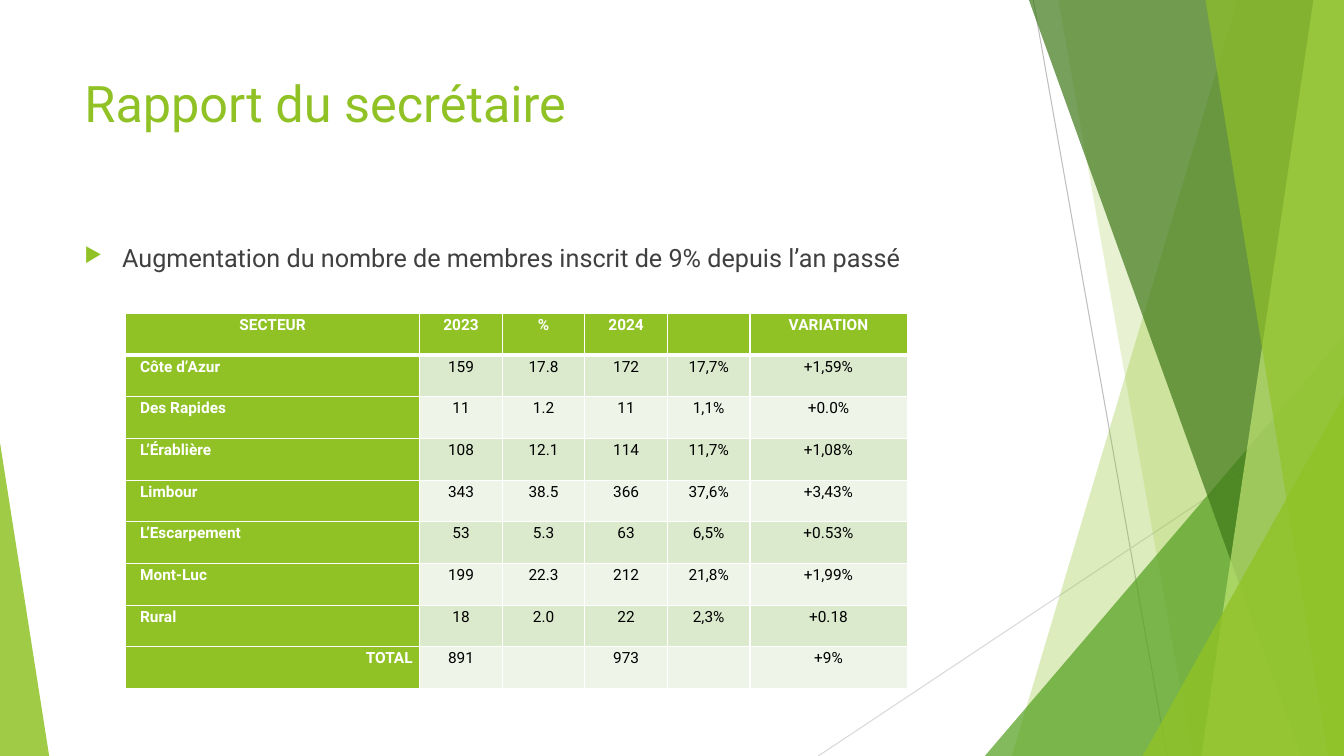
from lxml import etree
from pptx import Presentation
from pptx import util as u
from pptx.dml.color import RGBColor
from pptx.enum import shapes, text
from pptx.oxml.ns import qn

TITLE = "Rapport du secrétaire"
BULLET = "Augmentation du nombre de membres inscrit de 9% depuis l’an passé"
ROWS = [
    ("SECTEUR", "2023", "%", "2024", "", "VARIATION"),
    ("Côte d’Azur", "159", "17.8", "172", "17,7%", "+1,59%"),
    ("Des Rapides", "11", "1.2", "11", "1,1%", "+0.0%"),
    ("L’Érablière", "108", "12.1", "114", "11,7%", "+1,08%"),
    ("Limbour", "343", "38.5", "366", "37,6%", "+3,43%"),
    ("L’Escarpement", "53", "5.3", "63", "6,5%", "+0.53%"),
    ("Mont-Luc", "199", "22.3", "212", "21,8%", "+1,99%"),
    ("Rural", "18", "2.0", "22", "2,3%", "+0.18"),
    ("TOTAL", "891", "", "973", "", "+9%"),
]

FONT = "Roboto"
GREEN = RGBColor(0x90, 0xC2, 0x26)
LEAF = RGBColor(0x54, 0xA0, 0x21)
FOREST = RGBColor(0x3F, 0x78, 0x19)
LIME = RGBColor(0xC0, 0xE4, 0x74)
BAND_DARK = RGBColor(0xDB, 0xE9, 0xCD)
BAND_LIGHT = RGBColor(0xEE, 0xF4, 0xE8)
GREY = RGBColor(0xBF, 0xBF, 0xBF)
PALE_GREY = RGBColor(0xD9, 0xD9, 0xD9)
TEXT = RGBColor(0x40, 0x40, 0x40)
BLACK = RGBColor(0, 0, 0)
WHITE = RGBColor(0xFF, 0xFF, 0xFF)

WIDTH, HEIGHT = 33.87, 19.05
COLUMNS = (7.42, 2.08, 2.08, 2.08, 2.08, 3.96)
ROW_HEIGHT = 1.05

LINES = [
    (26.04, 0, 29.41, HEIGHT, GREY),
    (WIDTH, 10.24, 20.62, HEIGHT, PALE_GREY),
]
# kind, geometry, colour, opacity
FACETS = [
    ("band", (31.19, 25.5), GREEN, 30),
    ("band", (26.67, 30.05), GREEN, 20),
    ("triangle", (24.82, 8.46, WIDTH, 1), LEAF, 72),
    ("band", (25.93, 32.79), FOREST, 70),
    ("band", (33.1, 30.28), LIME, 70),
    ("band", (30.38, 33.48), GREEN, 65),
    ("triangle", (28.8, 9.98, WIDTH, 1), GREEN, 80),
    ("triangle", (0, 11.15, 1.24, 0), GREEN, 85),
]


def add_line(s, x1, y1, x2, y2, color):
    line = s.shapes.add_connector(
        shapes.MSO_CONNECTOR.STRAIGHT, u.Cm(x1), u.Cm(y1), u.Cm(x2), u.Cm(y2))
    line.line.color.rgb = color
    line.line.width = u.Pt(0.75)
    etree.SubElement(line._element.spPr, qn("a:effectLst"))


def add_facet(s, kind, geometry, color, opacity):
    if kind == "band":
        top_x, bottom_x = geometry
        builder = s.shapes.build_freeform(u.Cm(top_x), 0)
        corners = [(WIDTH, 0), (WIDTH, HEIGHT), (bottom_x, HEIGHT)]
        builder.add_line_segments([(u.Cm(x), u.Cm(y)) for x, y in corners])
        sp = builder.convert_to_shape()
    else:
        left, top, right, apex = geometry
        sp = s.shapes.add_shape(
            shapes.MSO_SHAPE.ISOSCELES_TRIANGLE, u.Cm(left), u.Cm(top),
            u.Cm(right - left), u.Cm(HEIGHT - top))
        sp.adjustments[0] = apex
    sp.shadow.inherit = False
    sp.line.fill.background()
    sp.fill.solid()
    sp.fill.fore_color.rgb = color
    clr = sp._element.spPr.find(".//" + qn("a:srgbClr"))
    etree.SubElement(clr, qn("a:alpha"), val=str(opacity * 1000))


def add_run(p, words, size, color, bold=False):
    r = p.add_run()
    r.text = words
    r.font.name = FONT
    r.font.size = u.Pt(size)
    r.font.bold = bold
    r.font.color.rgb = color


def add_text(s, top, height, words, size, color):
    sp = s.shapes.add_textbox(u.Cm(1.88), u.Cm(top), u.Cm(23.88), u.Cm(height))
    tf = sp.text_frame
    tf.word_wrap = True
    p = tf.paragraphs[0]
    add_run(p, words, size, color)
    return p


def add_bullet(p):
    p.space_before = u.Pt(10)
    pPr = p._p.get_or_add_pPr()
    pPr.set("marL", str(u.Cm(0.95)))
    pPr.set("indent", str(-u.Cm(0.95)))
    clr = etree.SubElement(pPr, qn("a:buClr"))
    etree.SubElement(clr, qn("a:srgbClr"), val=str(GREEN))
    etree.SubElement(pPr, qn("a:buSzPct"), val="80000")
    etree.SubElement(pPr, qn("a:buChar"), char="▶")


def set_borders(cell, row):
    tcPr = cell._tc.get_or_add_tcPr()
    for side in "LRTB":
        thick = (row, side) in ((0, "B"), (1, "T"))
        ln = etree.SubElement(
            tcPr, qn("a:ln" + side), w=str(u.Pt(3 if thick else 1)))
        fill = etree.SubElement(ln, qn("a:solidFill"))
        etree.SubElement(fill, qn("a:srgbClr"), val=str(WHITE))


def fill_cell(cell, row, col, words):
    head = row == 0 or col == 0
    cell.margin_left = cell.margin_right = u.Cm(0.18)
    cell.margin_top = cell.margin_bottom = 0
    set_borders(cell, row)
    cell.fill.solid()
    cell.fill.fore_color.rgb = (
        GREEN if head else BAND_DARK if row % 2 else BAND_LIGHT)
    if not words:
        return
    p = cell.text_frame.paragraphs[0]
    p.line_spacing = 1.15
    p.space_after = u.Pt(8)
    if row and col == 0:
        total = row == len(ROWS) - 1
        p.alignment = text.PP_ALIGN.RIGHT if total else text.PP_ALIGN.LEFT
        if not total:
            p._p.get_or_add_pPr().set("marL", str(u.Cm(0.19)))
    else:
        p.alignment = text.PP_ALIGN.CENTER
    add_run(p, words, 11, WHITE if head else BLACK, head)


def add_members_table(s):
    frame = s.shapes.add_table(
        len(ROWS), len(COLUMNS), u.Cm(3.16), u.Cm(7.9),
        u.Cm(sum(COLUMNS)), u.Cm(ROW_HEIGHT * len(ROWS)))
    table = frame.table
    table.horz_banding = False
    for column, width in zip(table.columns, COLUMNS):
        column.width = u.Cm(width)
    for i, values in enumerate(ROWS):
        table.rows[i].height = u.Cm(ROW_HEIGHT)
        for j, words in enumerate(values):
            fill_cell(table.cell(i, j), i, j, words)


def main():
    prs = Presentation()
    prs.slide_width, prs.slide_height = u.Cm(WIDTH), u.Cm(HEIGHT)
    s = prs.slides.add_slide(prs.slide_layouts[6])
    for line in LINES:
        add_line(s, *line)
    for facet in FACETS:
        add_facet(s, *facet)
    add_text(s, 1.7, 3.66, TITLE, 36, GREEN)
    add_bullet(add_text(s, 5.99, 10.77, BULLET, 18, TEXT))
    add_members_table(s)
    prs.save("out.pptx")


if __name__ == "__main__":
    main()
